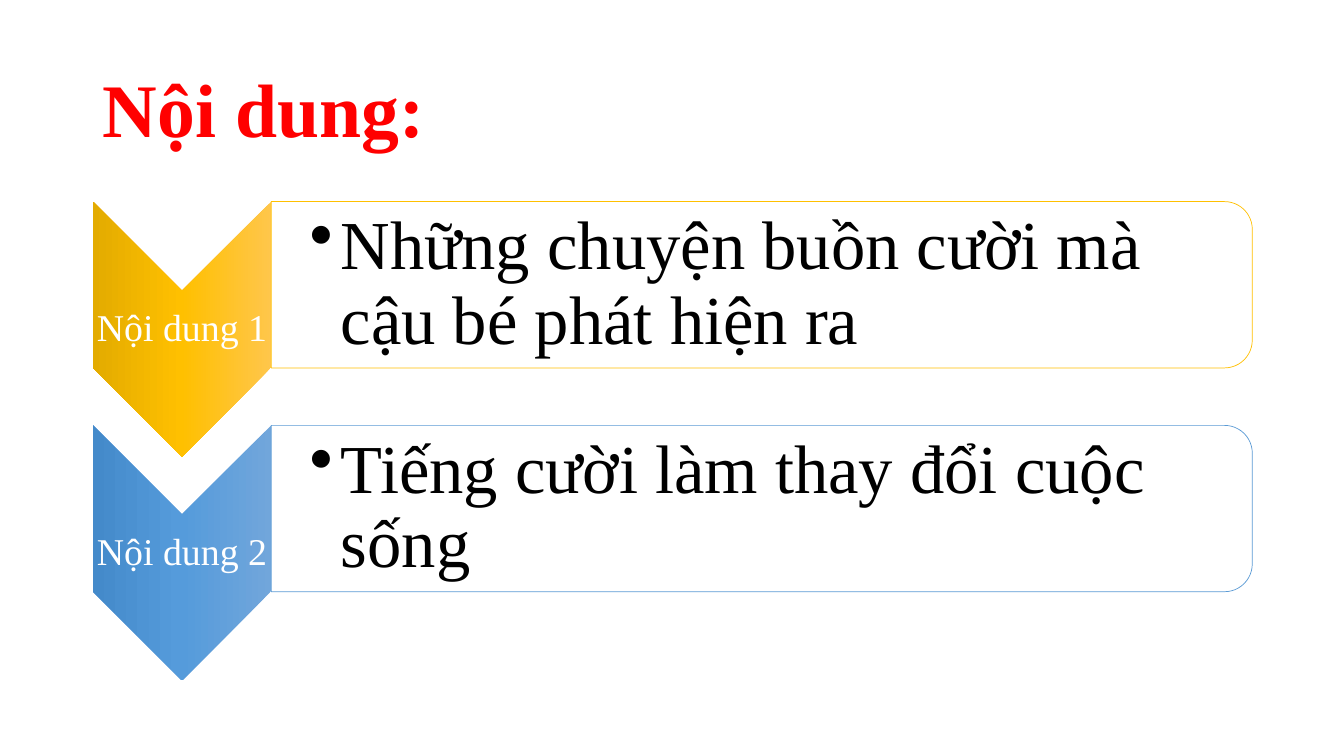
from lxml import etree
from pptx import Presentation
from pptx import util as u
from pptx.dml.color import RGBColor
from pptx.enum import shapes, text
from pptx.oxml import ns

COLORS = {"title": "FF0000", "label": "FFFFFF", "body": "000000", "panel": "FFFFFF"}
SECTIONS = [
    ("Nội dung 1", "Những chuyện buồn cười mà cậu bé phát hiện ra",
     "FFC000", ["FFC64B", "FFC000", "E3AB00"]),
    ("Nội dung 2", "Tiếng cười làm thay đổi cuộc sống",
     "5B9BD5", ["71A6DB", "559BDB", "448ACA"]),
]
ROW_STEP = 2.22


def add_xml(parent, tag, **attributes):
    return etree.SubElement(parent, ns.qn(tag), attributes)


class SlideBuilder:
    font_name = "Times New Roman"

    def __init__(self, page):
        self.page = page

    def format_text(self, para, size, color, bold=False):
        para.line_spacing = 0.9
        for span in para.runs:
            span.font.name = self.font_name
            span.font.size = u.Pt(size)
            span.font.bold = bold
            span.font.color.rgb = RGBColor.from_string(COLORS[color])

    def title(self, words):
        box = self.page.shapes.title
        box.left, box.top = u.Inches(0.92), u.Inches(0.4)
        box.width, box.height = u.Inches(11.5), u.Inches(1.45)
        frame = box.text_frame
        frame.text = words
        frame.auto_size = text.MSO_AUTO_SIZE.NONE
        frame.vertical_anchor = text.MSO_ANCHOR.MIDDLE
        frame.paragraphs[0].alignment = text.PP_ALIGN.LEFT
        self.format_text(frame.paragraphs[0], 54, "title", bold=True)

    def turned_shape(self, kind, left, top, width, height):
        """Add a shape turned a quarter clockwise; the lengths are before turning."""
        shape = self.page.shapes.add_shape(
            kind, u.Inches(left), u.Inches(top), u.Inches(width), u.Inches(height))
        shape.rotation = 90
        shape.shadow.inherit = False
        return shape

    def chevron(self, top, shades):
        shape = self.turned_shape(shapes.MSO_SHAPE.CHEVRON, 0.54, top, 2.53, 1.77)
        shape.line.fill.background()
        shape.fill.gradient()
        shape.fill.gradient_angle = 270
        stops = shape._element.spPr.find(ns.qn("a:gradFill")).find(ns.qn("a:gsLst"))
        for stop in list(stops):
            stops.remove(stop)
        for index, shade in enumerate(shades):
            stop = add_xml(stops, "a:gs", pos=str(index * 50000))
            add_xml(stop, "a:srgbClr", val=shade)

    def panel(self, top, outline):
        shape = self.turned_shape(
            shapes.MSO_SHAPE.ROUND_2_SAME_RECTANGLE, 6.73, top, 1.65, 9.73)
        shape.fill.solid()
        shape.fill.fore_color.rgb = RGBColor.from_string(COLORS["panel"])
        color = shape._element.spPr.find(ns.qn("a:solidFill"))[0]
        add_xml(color, "a:alpha", val="90000")
        shape.line.color.rgb = RGBColor.from_string(outline)
        shape.line.width = u.Pt(0.5)

    def text_box(self, words, left, top, width, height, margin, left_margin):
        box = self.page.shapes.add_textbox(
            u.Inches(left), u.Inches(top), u.Inches(width), u.Inches(height))
        frame = box.text_frame
        frame.word_wrap = True
        frame.vertical_anchor = text.MSO_ANCHOR.MIDDLE
        frame.margin_top = frame.margin_right = frame.margin_bottom = u.Inches(margin)
        frame.margin_left = u.Inches(left_margin)
        frame.text = words
        return frame.paragraphs[0]

    def label(self, words, top):
        para = self.text_box(words, 0.92, top, 1.77, 0.76, 0.02, 0.02)
        para.alignment = text.PP_ALIGN.CENTER
        self.format_text(para, 27, "label")

    def bullet(self, words, top):
        para = self.text_box(words, 2.69, top, 9.65, 1.49, 0.03, 0.38)
        para.level = 1
        properties = para._p.get_or_add_pPr()
        properties.set("marL", str(u.Inches(0.31)))
        properties.set("indent", str(-u.Inches(0.31)))
        add_xml(properties, "a:buChar", char="•")
        self.format_text(para, 49, "body")


def main():
    deck = Presentation()
    deck.slide_width, deck.slide_height = u.Inches(13.33), u.Inches(7.5)
    builder = SlideBuilder(deck.slides.add_slide(deck.slide_layouts[5]))
    builder.title("Nội dung:")
    for index, (label, sentence, outline, shades) in enumerate(SECTIONS):
        offset = index * ROW_STEP
        builder.chevron(2.38 + offset, shades)
        builder.label(label, 2.89 + offset)
        builder.panel(-2.04 + offset, outline)
        builder.bullet(sentence, 2.08 + offset)
    deck.save("out.pptx")


if __name__ == "__main__":
    main()
